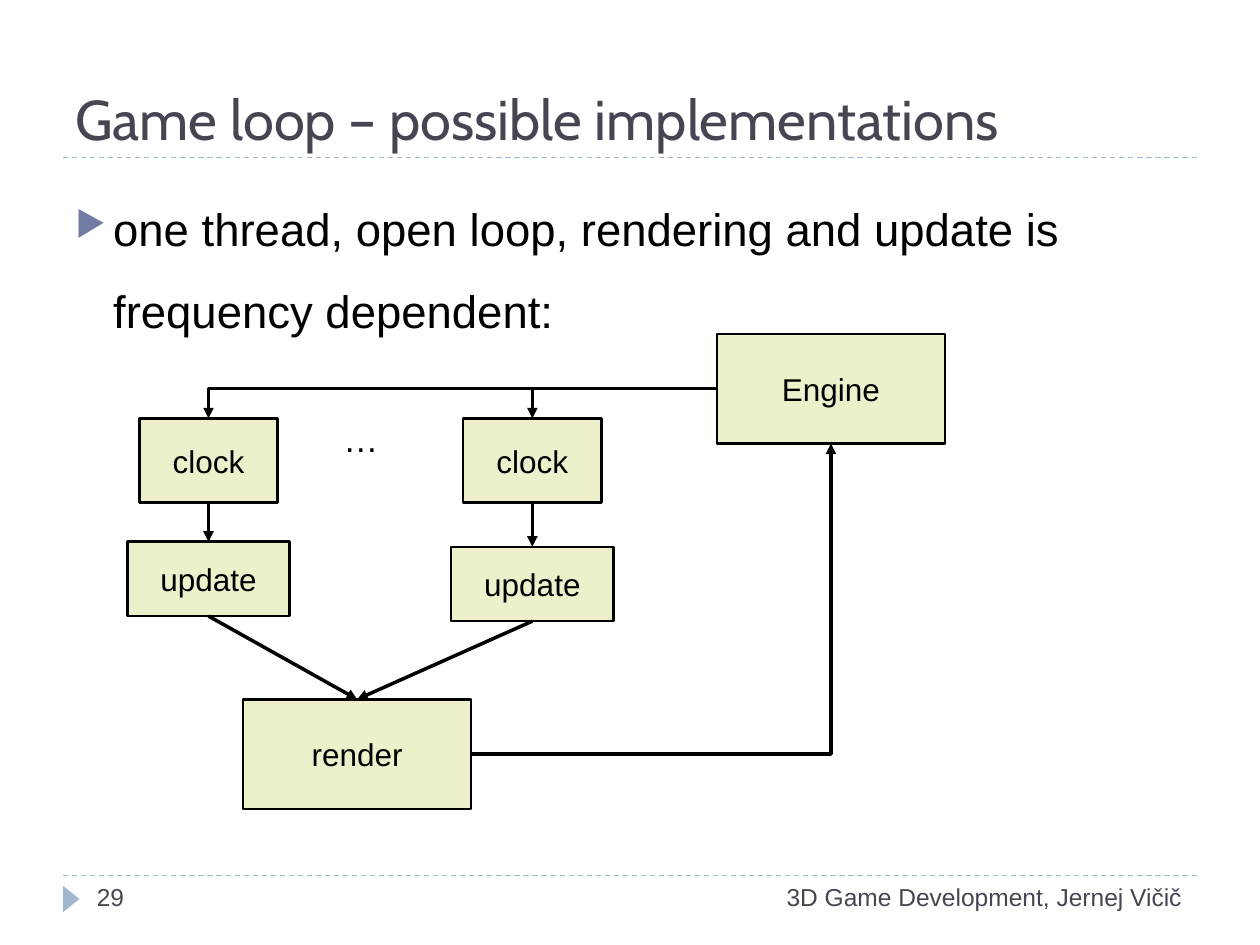
import lxml.etree
import pptx
import pptx.dml.color
import pptx.enum.dml
import pptx.enum.shapes
import pptx.enum.text
import pptx.oxml.ns
import pptx.util

RGBColor = pptx.dml.color.RGBColor
BLACK = RGBColor(0x00, 0x00, 0x00)
SLATE = RGBColor(0x46, 0x46, 0x53)
PALE_BLUE = RGBColor(0x9F, 0xB8, 0xCD)
CREAM = RGBColor(0xED, 0xF0, 0xCA)
BULLET_COLOR = "727CA3"

Pt = pptx.util.Pt
qn = pptx.oxml.ns.qn
ALIGN = pptx.enum.text.PP_ALIGN
ANCHOR = pptx.enum.text.MSO_ANCHOR
SHAPE = pptx.enum.shapes.MSO_SHAPE
CONNECTOR = pptx.enum.shapes.MSO_CONNECTOR
TOP, LEFT, BOTTOM, RIGHT = range(4)

presentation = pptx.Presentation()
presentation.slide_width = pptx.util.Inches(10)
presentation.slide_height = pptx.util.Inches(7.5)
slide = presentation.slides.add_slide(presentation.slide_layouts[6])

# The slide is a grid of 100 columns by 75 rows.
COLUMN = presentation.slide_width / 100
ROW = presentation.slide_height / 75


def write_text(shape, text, size, color=BLACK, font="Arial",
               align=ALIGN.LEFT, anchor=ANCHOR.TOP):
    """Fill the shape with one wrapped paragraph and return the paragraph."""
    frame = shape.text_frame
    frame.word_wrap = True
    frame.vertical_anchor = anchor
    paragraph = frame.paragraphs[0]
    paragraph.alignment = align
    run = paragraph.add_run()
    run.text = text
    for name, value in {"name": font, "size": Pt(size)}.items():
        setattr(run.font, name, value)
    run.font.color.rgb = color
    return paragraph


def add_line(kind, start, end, color=BLACK, width=0, arrow=True):
    """Draw a shadowless connector between two (column, row) points."""
    line = slide.shapes.add_connector(
        kind, int(start[0] * COLUMN), int(start[1] * ROW),
        int(end[0] * COLUMN), int(end[1] * ROW))
    line.line.color.rgb = color
    line.line.width = Pt(width)
    if arrow:
        lxml.etree.SubElement(line.line._get_or_add_ln(), qn("a:tailEnd"), type="triangle")
    properties = line._element.spPr
    lxml.etree.SubElement(properties, qn("a:effectLst"))
    if kind == CONNECTOR.ELBOW:
        properties.find(qn("a:prstGeom")).set("prst", "bentConnector2")
    return line


# Rules and page marker
for row in (69.5, 12.5):
    rule = add_line(CONNECTOR.STRAIGHT, (5, row), (95, row), PALE_BLUE, 0.75, arrow=False)
    rule.line.dash_style = pptx.enum.dml.MSO_LINE.DASH
marker = slide.shapes.add_shape(
    SHAPE.ISOSCELES_TRIANGLE, int(4.6 * COLUMN), int(70.7 * ROW), int(2.1 * COLUMN), int(1.3 * ROW))
marker.rotation = 90
marker.shadow.inherit = False
marker.fill.solid()
marker.fill.fore_color.rgb = PALE_BLUE
marker.line.fill.background()

# Text: left, top, width, height on the grid, wording, size, format
texts = {
    "title": (5, 1.7, 90, 10.8, "Game loop – possible implementations", 32,
              {"color": SLATE, "font": "Cabin", "anchor": ANCHOR.BOTTOM}),
    "number": (6.7, 69.5, 21.7, 4, "29", 14, {"color": SLATE}),
    "footer": (28.7, 69.5, 66.1, 4, "3D Game Development, Jernej Vičič", 14,
               {"color": SLATE, "align": ALIGN.RIGHT}),
    "body": (5, 13.3, 90, 54,
             "one thread, open loop, rendering and update is frequency dependent:", 26, {}),
    "ellipsis": (24.4, 33.3, 8.5, 3, "…", 20,
                 {"align": ALIGN.CENTER, "anchor": ANCHOR.MIDDLE}),
}
paragraphs = {}
for name, (left, top, width, height, text, size, text_format) in texts.items():
    box = slide.shapes.add_textbox(
        int(left * COLUMN), int(top * ROW), int(width * COLUMN), int(height * ROW))
    paragraphs[name] = write_text(box, text, size, **text_format)

for name, value in {"line_spacing": 1.5, "space_before": Pt(6)}.items():
    setattr(paragraphs["body"], name, value)
bullet = paragraphs["body"]._p.get_or_add_pPr()
bullet.set("marL", str(int(3 * COLUMN)))
bullet.set("indent", str(int(-3 * COLUMN)))
bullet_color = lxml.etree.SubElement(bullet, qn("a:buClr"))
lxml.etree.SubElement(bullet_color, qn("a:srgbClr"), val=BULLET_COLOR)
lxml.etree.SubElement(bullet, qn("a:buSzPct"), val="76000")
lxml.etree.SubElement(bullet, qn("a:buChar"), char="▶")

# Boxes: wording, centre column, top row, width, height
FIRST, SECOND, ENGINE, RENDER = 16.55, 42.25, 65.95, 28.35
boxes = {
    "engine": ("Engine", ENGINE, 26.5, 18.1, 8.7),
    "render": ("render", RENDER, 55.5, 18.1, 8.7),
    "first clock": ("clock", FIRST, 33.2, 11, 6.7),
    "second clock": ("clock", SECOND, 33.2, 11, 6.7),
    "first update": ("update", FIRST, 43, 12.9, 5.9),
    "second update": ("update", SECOND, 43.4, 12.9, 5.9),
}
shapes = {}
for name, (text, centre, top, width, height) in boxes.items():
    shape = slide.shapes.add_shape(
        SHAPE.RECTANGLE, int((centre - width / 2) * COLUMN), int(top * ROW),
        int(width * COLUMN), int(height * ROW))
    shape.shadow.inherit = False
    shape.fill.solid()
    shape.fill.fore_color.rgb = CREAM
    shape.line.color.rgb = BLACK
    shape.line.width = Pt(1.5)
    write_text(shape, text, 18, align=ALIGN.CENTER, anchor=ANCHOR.MIDDLE)
    shapes[name] = shape

# Each thread runs clock, update, render
for thread in ("first", "second"):
    steps = [shapes[f"{thread} clock"], shapes[f"{thread} update"], shapes["render"]]
    for source, target in zip(steps, steps[1:]):
        arrow = add_line(CONNECTOR.STRAIGHT, (0, 0), (0, 0))
        arrow.begin_connect(source, BOTTOM)
        arrow.end_connect(target, TOP)

# The engine starts both clocks, and render returns to the engine
for start, end in (
    ((56.9, 30.85), (FIRST, 33.2)),
    ((56.9, 30.85), (SECOND, 33.2)),
    ((37.4, 59.85), (ENGINE, 35.2)),
):
    add_line(CONNECTOR.ELBOW, start, end)

presentation.save("out.pptx")
